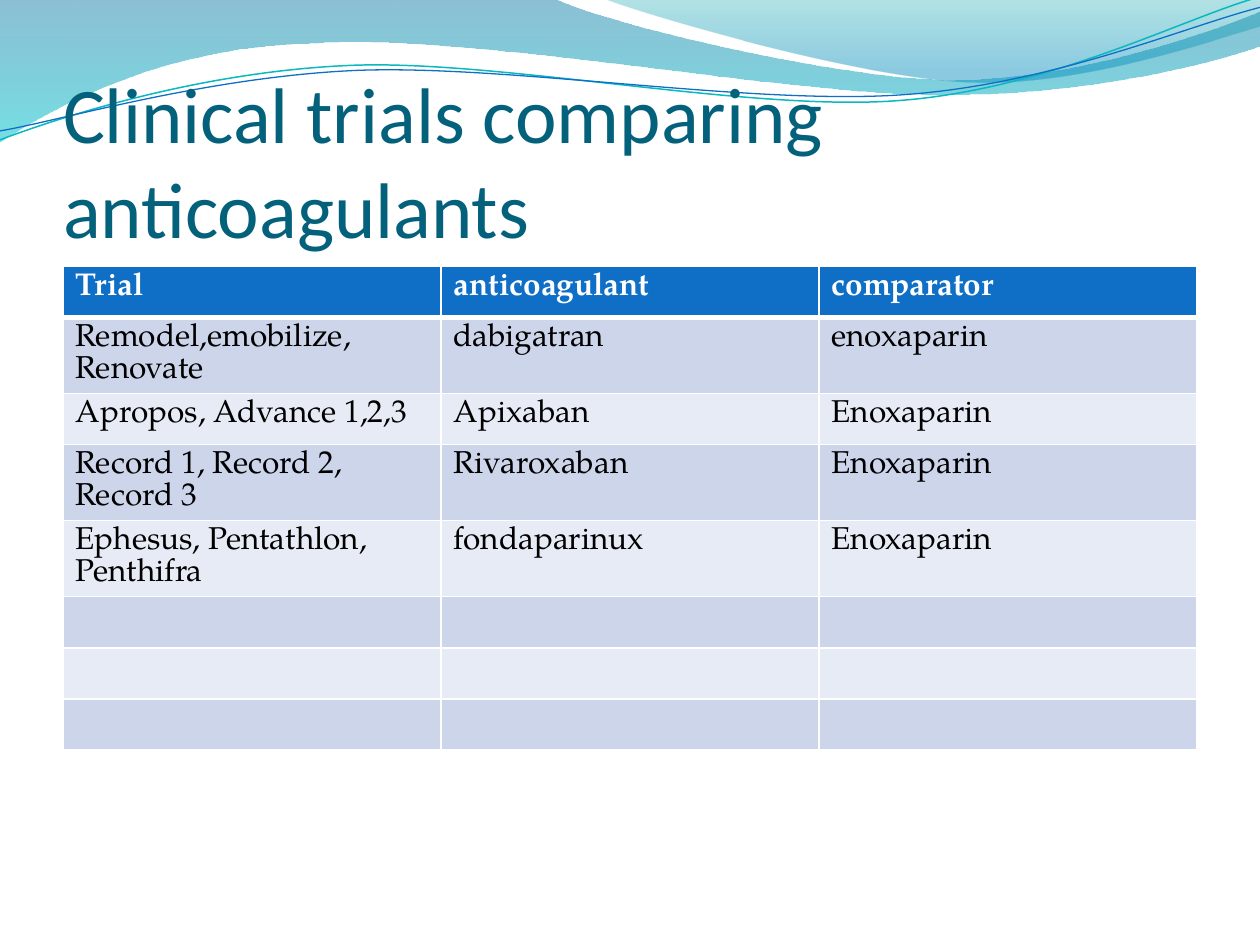
from lxml import etree
from pptx import Presentation
from pptx.dml.color import RGBColor as Rgb
from pptx.enum.text import MSO_ANCHOR as Anchor, MSO_AUTO_SIZE as AutoSize, PP_ALIGN as Align
from pptx.oxml.ns import qn
from pptx.util import Cm, Pt

COLORS = {
    "title": "04617B", "header": "0F6FC6", "white": "FFFFFF", "black": "000000",
    "band_dark": "CCD5EA", "band_light": "E7EBF5",
    "ocean": "0074A1", "cyan": "00C6CF", "teal": "00A1A9", "sky": "008BBF",
    "teal_line": "0AB8BF", "blue_line": "0F6FC6",
}

WIDE_WAVE = [
    [(0, 0)], [(11.18, -0.03)],
    [(12.09, 0.43), (16.87, 1.6), (19.25, 1.6)],
    [(21.67, 1.6), (24.33, 0.66), (25.4, 0.23)],
    [(25.43, 0.91)],
    [(24.97, 1.12), (22.1, 1.93), (18.95, 1.91)],
    [(15.8, 1.91), (9.7, 0.71), (6.53, 0.86)],
    [(3.28, 0.91), (1.17, 2.11), (-0.03, 2.87)],
    [(0, 0)],
]
RIGHT_WAVE = [
    [(12.17, -0.03)],
    [(12.93, 0.28), (17.32, 1.57), (19.53, 1.65)],
    [(21.74, 1.75), (24.41, 0.81), (25.4, 0.53)],
    [(25.4, 0)], [(12.17, -0.03)],
]
TEAL_RIPPLE = [
    [(0, 2.82)],
    [(1.22, 2.36), (4.01, 1.45), (7.04, 1.32)],
    [(10.03, 1.19), (15.06, 2.26), (18.11, 2.03)],
    [(21.16, 1.8), (23.83, 0.38), (25.35, -0.05)],
]
BLUE_RIPPLE = [
    [(0, 2.64)],
    [(1.19, 2.44), (4.17, 1.55), (7.19, 1.42)],
    [(10.24, 1.3), (15.16, 2.13), (18.21, 1.91)],
    [(21.23, 1.7), (23.9, 0.53), (25.4, 0.15)],
]

TRIALS = [
    ("Trial", "anticoagulant", "comparator"),
    ("Remodel,emobilize, Renovate", "dabigatran", "enoxaparin"),
    ("Apropos, Advance 1,2,3", "Apixaban", "Enoxaparin"),
    ("Record 1, Record 2, Record 3", "Rivaroxaban", "Enoxaparin"),
    ("Ephesus, Pentathlon, Penthifra", "fondaparinux", "Enoxaparin"),
] + [("", "", "")] * 3


def color(name):
    return Rgb.from_string(COLORS[name])


class SlideWriter:
    title_font = "Calibri"
    body_font = "TeX Gyre Pagella"

    def __init__(self, slide):
        self.slide = slide

    def outline(self, segments, close):
        places = [(Cm(x), Cm(y)) for segment in segments for x, y in segment]
        builder = self.slide.shapes.build_freeform(*places[0])
        builder.add_line_segments(places[1:], close=close)
        shape = builder.convert_to_shape()
        shape.shadow.inherit = False
        steps = iter(list(shape._element.spPr.iter(qn("a:lnTo"))))
        for segment in segments[1:]:
            curve = next(steps)
            if len(segment) == 3:
                curve.tag = qn("a:cubicBezTo")
                for _ in range(2):
                    curve.append(next(steps)[0])
        for leftover in list(shape._element.spPr.iter(qn("a:lnTo"))):
            if len(leftover) == 0:
                leftover.getparent().remove(leftover)
        return shape

    def wave(self, segments, stops):
        shape = self.outline(segments, True)
        shape.line.fill.background()
        shape.fill.gradient()
        shape.fill.gradient_angle = 270
        for stop, (position, name, _) in zip(shape.fill.gradient_stops, stops):
            stop.position = position
            stop.color.rgb = color(name)
        for tint, (_, _, opacity) in zip(shape._element.spPr.iter(qn("a:srgbClr")), stops):
            etree.SubElement(tint, qn("a:alpha"), val=str(opacity * 1000))

    def ripple(self, segments, name, width):
        shape = self.outline(segments, False)
        shape.fill.background()
        shape.line.color.rgb = color(name)
        shape.line.width = Pt(width)

    def style_runs(self, paragraph, font, size, name, bold=False):
        for run in paragraph.runs:
            run.font.name = font
            run.font.size = Pt(size)
            run.font.bold = bold
            run.font.color.rgb = color(name)

    def title(self, text, left, top, width, height):
        title = self.slide.shapes.title
        self.slide.shapes._spTree.append(title._element)
        title.left, title.top, title.width, title.height = map(Cm, (left, top, width, height))
        frame = title.text_frame
        frame.text = text
        frame.word_wrap = True
        frame.auto_size = AutoSize.NONE
        frame.vertical_anchor = Anchor.BOTTOM
        frame.margin_left = frame.margin_right = frame.margin_bottom = 0
        frame.margin_top = Cm(0.13)
        frame.paragraphs[0].alignment = Align.LEFT
        self.style_runs(frame.paragraphs[0], self.title_font, 45, "title")

    def border(self, cell, side, width):
        properties = cell._tc.get_or_add_tcPr()
        edge = etree.Element(qn(f"a:{side}"), w=str(Pt(width)))
        fill = etree.SubElement(edge, qn("a:solidFill"))
        etree.SubElement(fill, qn("a:srgbClr"), val=COLORS["white"])
        properties.insert(len(properties) - 1, edge)

    def table(self, rows, left, top, width, row_height):
        frame = self.slide.shapes.add_table(
            len(rows), len(rows[0]), Cm(left), Cm(top), Cm(width), Cm(row_height * len(rows)))
        for r, row in enumerate(rows):
            frame.table.rows[r].height = Cm(row_height)
            header = r == 0
            band = "header" if header else "band_dark" if r % 2 else "band_light"
            for c, text in enumerate(row):
                cell = frame.table.cell(r, c)
                cell.text_frame.text = text
                cell.fill.solid()
                cell.fill.fore_color.rgb = color(band)
                self.style_runs(cell.text_frame.paragraphs[0], self.body_font, 18,
                                "white" if header else "black", header)
                for side in ("lnL", "lnR", "lnT", "lnB"):
                    thick = (header and side == "lnB") or (r == 1 and side == "lnT")
                    self.border(cell, side, 3 if thick else 1)


def main():
    deck = Presentation()
    deck.slide_width, deck.slide_height = Cm(25.4), Cm(19.05)
    writer = SlideWriter(deck.slides.add_slide(deck.slide_layouts[5]))
    writer.wave(WIDE_WAVE, [(0, "ocean", 45), (1, "cyan", 55)])
    writer.wave(RIGHT_WAVE, [(0, "teal", 30), (0.8, "sky", 45)])
    writer.ripple(TEAL_RIPPLE, "teal_line", 0.85)
    writer.ripple(BLUE_RIPPLE, "blue_line", 0.75)
    writer.title("Clinical trials comparing anticoagulants", 1.27, 1.95, 22.86, 3.17)
    writer.table(TRIALS, 1.27, 5.37, 22.86, 1.03)
    deck.save("out.pptx")


if __name__ == "__main__":
    main()
